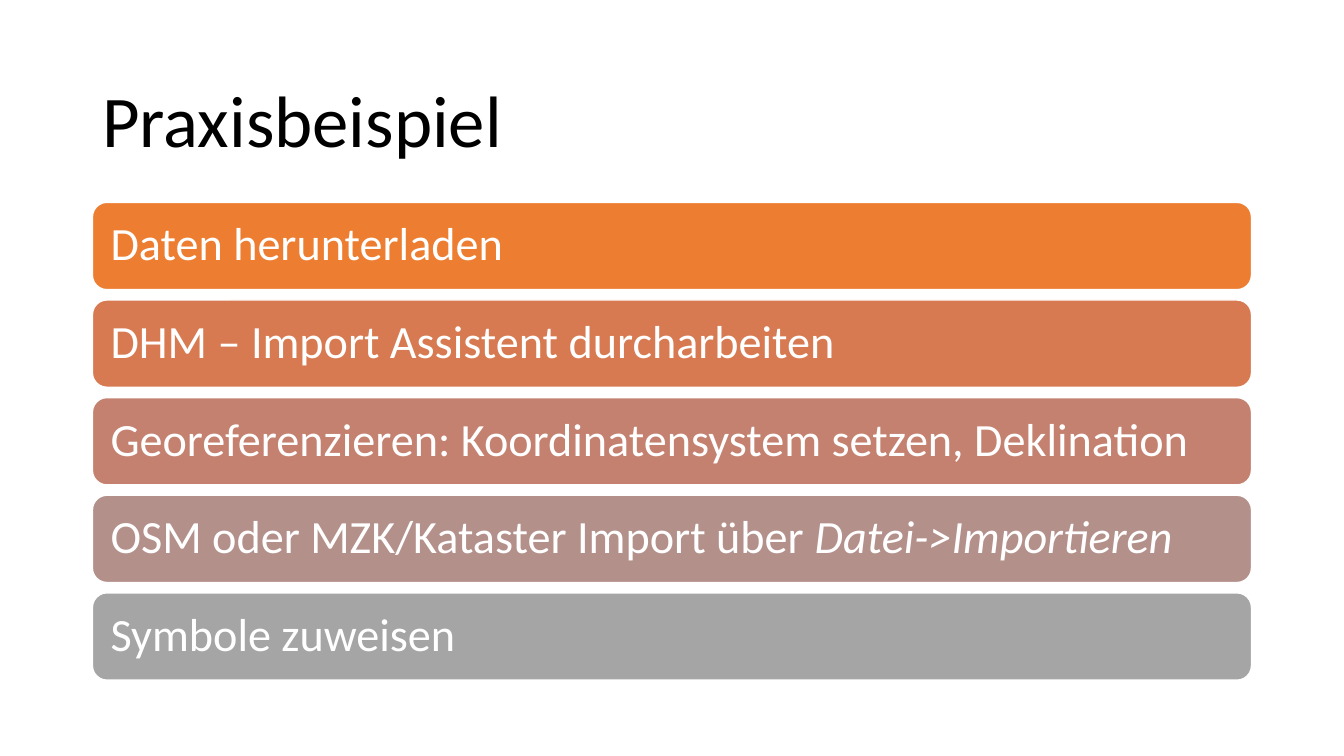
from pptx import Presentation
from pptx.dml.color import RGBColor as RGB
from pptx.enum.shapes import MSO_SHAPE as Form
from pptx.enum.text import MSO_ANCHOR as Anchor, PP_ALIGN as Align
from pptx.util import Cm, Pt

HUES = {
    "black": "000000",
    "white": "FFFFFF",
    "orange": "ED7D31",
    "rust": "D87A51",
    "rose": "C48170",
    "mauve": "B4908B",
    "gray": "A5A5A5",
}
STEPS = [
    ("orange", "Daten herunterladen", ""),
    ("rust", "DHM – Import Assistent durcharbeiten", ""),
    ("rose", "Georeferenzieren: Koordinatensystem setzen, Deklination", ""),
    ("mauve", "OSM oder MZK/Kataster Import über ", "Datei->Importieren"),
    ("gray", "Symbole zuweisen", ""),
]
LEFT, WIDTH = Cm(2.33), Cm(29.21)
TOP, PITCH, HIGH = 5.1, 2.46, 2.2


def color(name):
    return RGB.from_string(HUES[name])


def style(frame, size, hue):
    frame.word_wrap = True
    frame.vertical_anchor = Anchor.MIDDLE
    para = frame.paragraphs[0]
    para.alignment = Align.LEFT
    para.line_spacing = 0.9
    para.font.name = "Calibri"
    para.font.size = Pt(size)
    para.font.color.rgb = color(hue)
    return para


deck = Presentation()
deck.slide_width, deck.slide_height = Cm(33.87), Cm(19.05)
slide = deck.slides.add_slide(deck.slide_layouts[6])

title = slide.shapes.add_textbox(LEFT, Cm(1.55), WIDTH, Cm(3.15))
style(title.text_frame, 52, "black").add_run().text = "Praxisbeispiel"

for row, (hue, text, menu) in enumerate(STEPS):
    bar = slide.shapes.add_shape(
        Form.ROUNDED_RECTANGLE, LEFT, Cm(TOP + row * PITCH), WIDTH, Cm(HIGH))
    bar.shadow.inherit = False
    bar.fill.solid()
    bar.fill.fore_color.rgb = color(hue)
    bar.line.color.rgb = color("white")
    bar.line.width = Pt(1)
    frame = bar.text_frame
    frame.margin_left = frame.margin_right = Cm(0.35)
    frame.margin_top = frame.margin_bottom = Cm(0.35)
    para = style(frame, 33, "white")
    para.add_run().text = text
    if menu:
        run = para.add_run()
        run.text = menu
        run.font.italic = True

deck.save("out.pptx")
